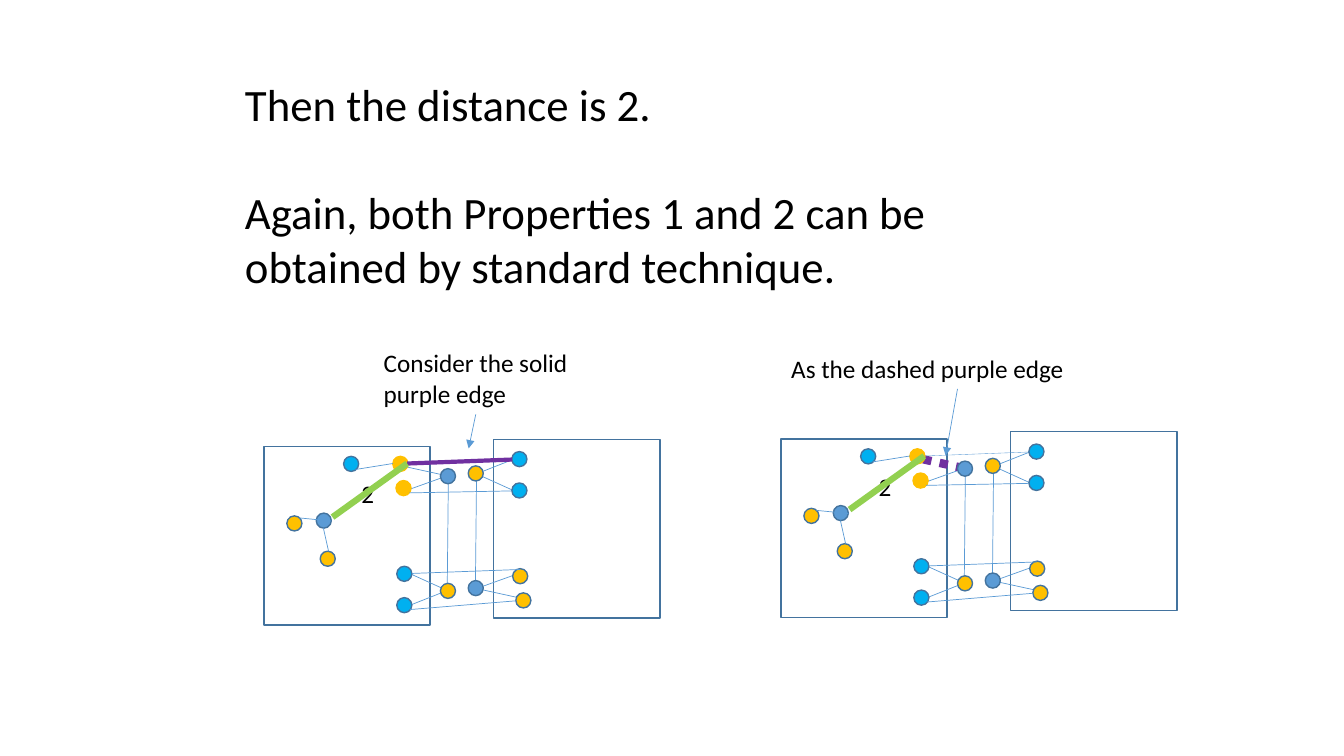
from dataclasses import dataclass

from lxml.etree import SubElement
from pptx import Presentation
from pptx.dml.color import RGBColor
from pptx.enum.dml import MSO_LINE
from pptx.enum.shapes import MSO_CONNECTOR, MSO_SHAPE
from pptx.enum.text import MSO_ANCHOR, MSO_AUTO_SIZE, PP_ALIGN
from pptx.oxml.ns import qn
from pptx.util import Cm, Pt


@dataclass(frozen=True)
class Theme:
    font: str = "Calibri"
    text: str = "000000"
    outline: str = "43739E"
    blue: str = "5B9BD5"
    cyan: str = "00B0F0"
    gold: str = "FFC000"
    purple: str = "7030A0"
    green: str = "92D050"
    heading_size: float = 32
    label_size: float = 18
    heading_gap: float = 39
    thin: float = 0.5


THEME = Theme()
NODE_SIZE = 0.38
HALF_WIDTH, HALF_HEIGHT = 4.19, 4.5
TURN_X, TURN_Y = 9.98, 4.32

CLUSTER_EDGES = [
    ((4.65, 0.74), (4.62, 3.63)),
    ((4.62, 0.74), (3.56, 1.12)),
    ((4.62, 3.63), (3.56, 3.15)),
    ((4.62, 3.63), (3.71, 3.99)),
]
HUB_EDGE = ((4.62, 0.74), (3.43, 0.48))
CLUSTER_NODES = [
    ((4.64, 0.75), THEME.blue),
    ((4.64, 3.64), THEME.gold),
    ((3.54, 4.0), THEME.cyan),
    ((3.54, 3.21), THEME.cyan),
]
END_NODES = [(3.52, 1.05), (3.44, 0.44)]
TOP_EDGE = ((3.61, 0.43), (6.25, 0.33))
CROSS_EDGES = [
    ((3.66, 1.17), (6.25, 1.12)),
    ((3.73, 3.2), (6.45, 3.1)),
    ((3.68, 4.11), (6.35, 3.89)),
]
GREEN_EDGE = ((3.61, 0.43), (1.73, 1.78))
BRANCH_NODES = [
    ((1.51, 1.87), THEME.blue),
    ((1.61, 2.83), THEME.gold),
    ((0.77, 1.94), THEME.gold),
    ((2.2, 0.44), THEME.cyan),
]
BRANCH_EDGES = [
    ((1.7, 1.88), (0.89, 1.8)),
    ((1.5, 2.06), (1.63, 2.64)),
    ((2.31, 0.58), (3.25, 0.43)),
]


def rgb(color):
    return RGBColor.from_string(color)


def write(frame, *paragraphs, size=THEME.label_size, color=THEME.text, wrap=True, gap=0):
    frame.word_wrap = wrap
    frame.auto_size = MSO_AUTO_SIZE.NONE
    frame.vertical_anchor = MSO_ANCHOR.TOP
    for index, words in enumerate(paragraphs):
        paragraph = frame.paragraphs[0] if index == 0 else frame.add_paragraph()
        paragraph.alignment = PP_ALIGN.LEFT
        paragraph.space_before = Pt(gap if index else 0)
        run = paragraph.add_run()
        run.text = words
        run.font.name = THEME.font
        run.font.size = Pt(size)
        run.font.color.rgb = rgb(color)


def add_label(shapes, words, left, top, width, height, wrap=True):
    label = shapes.add_textbox(Cm(left), Cm(top), Cm(width), Cm(height))
    write(label.text_frame, words, wrap=wrap)


def add_outlined(shapes, kind, left, top, width, height, fill=None, outline=THEME.outline):
    figure = shapes.add_shape(kind, Cm(left), Cm(top), Cm(width), Cm(height))
    figure.shadow.inherit = False
    if fill:
        figure.fill.solid()
        figure.fill.fore_color.rgb = rgb(fill)
    else:
        figure.fill.background()
    figure.line.color.rgb = rgb(outline)
    figure.line.width = Pt(1)


def add_node(shapes, center, fill, outline=THEME.outline):
    x, y = center
    add_outlined(shapes, MSO_SHAPE.OVAL, x - NODE_SIZE / 2, y - NODE_SIZE / 2,
                 NODE_SIZE, NODE_SIZE, fill, outline)


def add_edge(shapes, start, end, color=THEME.blue, width=THEME.thin, dash=None, arrow=False):
    edge = shapes.add_connector(MSO_CONNECTOR.STRAIGHT, *(Cm(v) for v in (*start, *end)))
    edge.line.color.rgb = rgb(color)
    edge.line.width = Pt(width)
    if dash:
        edge.line.dash_style = dash
    if arrow:
        SubElement(edge.line._get_or_add_ln(), qn("a:tailEnd"), type="triangle")
    SubElement(edge._element.spPr, qn("a:effectLst"))


def add_cluster(shapes, place, hub_style, end_outline):
    corners = place((0, 0)), place((HALF_WIDTH, HALF_HEIGHT))
    left, top = (min(axis) for axis in zip(*corners))
    add_outlined(shapes, MSO_SHAPE.RECTANGLE, left, top, HALF_WIDTH, HALF_HEIGHT)
    for start, end in CLUSTER_EDGES:
        add_edge(shapes, place(start), place(end))
    add_edge(shapes, *map(place, HUB_EDGE), **hub_style)
    for center, fill in CLUSTER_NODES:
        add_node(shapes, place(center), fill)
    for center in END_NODES:
        add_node(shapes, place(center), THEME.gold, end_outline)


def add_graph(slide, left, top, hub_style, top_style):
    def place(point):
        return left + point[0], top + point[1]

    def turned(point):
        return place((TURN_X - point[0], TURN_Y - point[1]))

    shapes = slide.shapes.add_group_shape().shapes
    add_label(shapes, "2", *place((2.21, 0.69)), 0.84, 1.02, wrap=False)
    add_cluster(shapes, place, hub_style, THEME.gold)
    add_cluster(shapes, turned, {}, THEME.outline)
    add_edge(shapes, *map(place, TOP_EDGE), **top_style)
    for edge in CROSS_EDGES:
        add_edge(shapes, *map(place, edge))
    add_edge(shapes, *map(place, GREEN_EDGE), color=THEME.green, width=4.5)
    for center, fill in BRANCH_NODES:
        add_node(shapes, place(center), fill)
    for edge in BRANCH_EDGES:
        add_edge(shapes, *map(place, edge))


def add_heading(slide):
    heading = slide.shapes.title
    heading.left, heading.top = Cm(5.92), Cm(1.8)
    heading.width, heading.height = Cm(19.86), Cm(5.74)
    write(heading.text_frame, "Then the distance is 2.",
          "Again, both Properties 1 and 2 can be obtained by standard technique.",
          size=THEME.heading_size, gap=THEME.heading_gap)


def main():
    deck = Presentation()
    deck.slide_width, deck.slide_height = Cm(33.87), Cm(19.05)
    slide = deck.slides.add_slide(deck.slide_layouts.get_by_name("Title Only"))
    add_heading(slide)

    solid = {"color": THEME.purple, "width": 3}
    dashed = {"color": THEME.purple, "width": 6, "dash": MSO_LINE.ROUND_DOT}
    add_graph(slide, 6.65, 11.25, hub_style={}, top_style=solid)
    add_graph(slide, 19.68, 11.06, hub_style=dashed, top_style={"width": 0.25})

    add_label(slide.shapes, "Consider the solid purple edge", 9.42, 8.64, 6.15, 1.8)
    add_edge(slide.shapes, (11.99, 10.44), (11.81, 11.3), arrow=True)
    add_label(slide.shapes, "As the dashed purple edge", 19.69, 8.79, 7.47, 1.02, wrap=False)
    add_edge(slide.shapes, (24.13, 9.8), (23.83, 11.48), arrow=True)
    deck.save("out.pptx")


if __name__ == "__main__":
    main()
